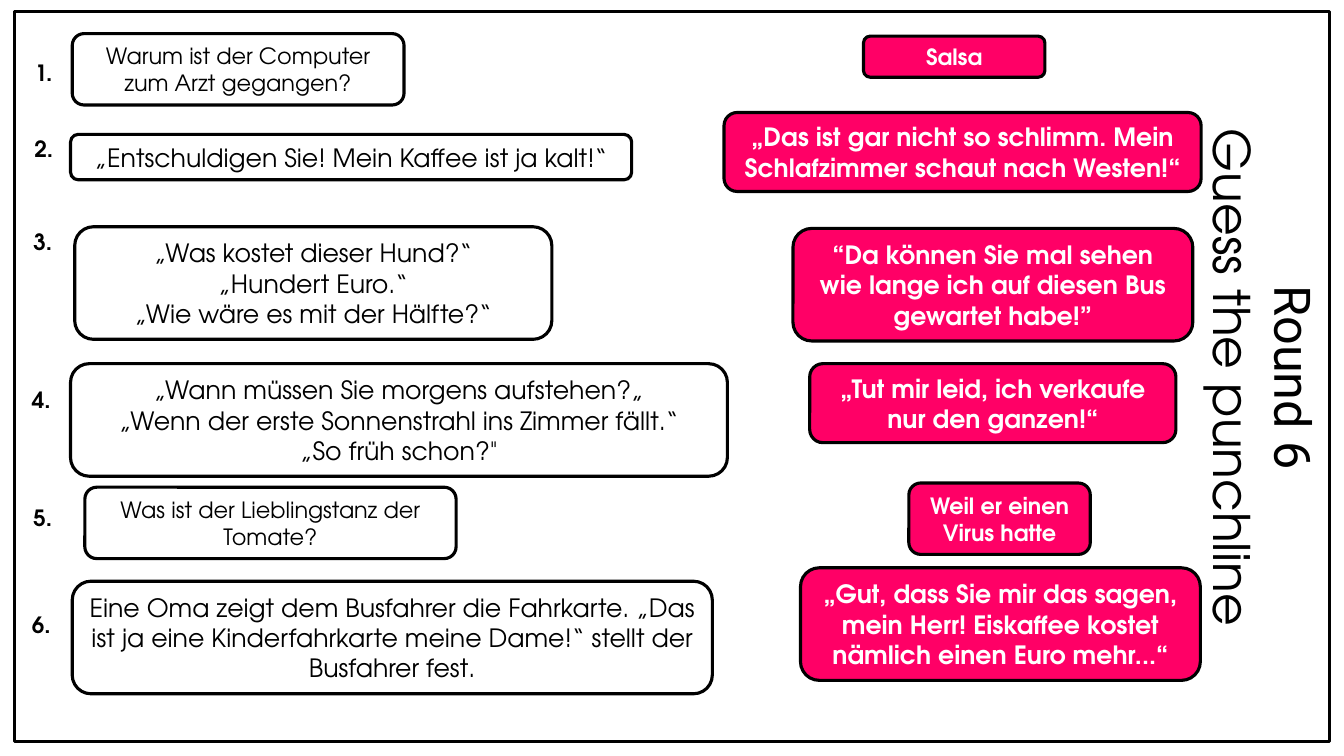
from dataclasses import dataclass

from pptx import Presentation
from pptx.dml.color import RGBColor as Rgb
from pptx.enum.shapes import MSO_SHAPE as Shape
from pptx.enum.text import MSO_ANCHOR as Anchor, MSO_AUTO_SIZE as Fit, PP_ALIGN as Align
from pptx.util import Inches, Pt


@dataclass(frozen=True)
class Theme:
    """Colours, fonts and type sizes of the slide."""
    ink: str = "000000"
    paper: str = "FFFFFF"
    pink: str = "FF0066"
    face: str = "TeX Gyre Adventor"
    head: str = "Roboto"
    title: int = 36
    large: int = 18
    small: int = 16
    line: float = 2.25


THEME = Theme()
COLS, ROWS = 160, 90
WIDE, HIGH = Inches(13.333), Inches(7.5)

JOKES = [
    ((8.6, 4, 39.5, 8.5), THEME.small, ["Warum ist der Computer zum Arzt gegangen?"]),
    ((8.4, 16, 66.8, 5.4), THEME.large, ["„Entschuldigen Sie! Mein Kaffee ist ja kalt!“"]),
    ((8.9, 27, 56.8, 13.4), THEME.large,
     ["„Was kostet dieser Hund?“", "„Hundert Euro.“", "„Wie wäre es mit der Hälfte?“"]),
    ((8.4, 43.3, 78.2, 13.4), THEME.large,
     ["„Wann müssen Sie morgens aufstehen?„",
      "„Wenn der erste Sonnenstrahl ins Zimmer fällt.“", "„So früh schon?\""]),
    ((10.1, 58, 44.2, 8.5), THEME.small, ["Was ist der Lieblingstanz der Tomate?"]),
    ((8.6, 69.2, 76.2, 13.4), THEME.large,
     ["Eine Oma zeigt dem Busfahrer die Fahrkarte. „Das ist ja eine "
      "Kinderfahrkarte meine Dame!“ stellt der Busfahrer fest."]),
]

LINES = [
    ((102.8, 4.3, 21.6, 4.9), THEME.small, "Salsa"),
    ((86.2, 13.4, 56.8, 9.4), THEME.large,
     "„Das ist gar nicht so schlimm. Mein Schlafzimmer schaut nach Westen!“"),
    ((94.4, 27.2, 47.6, 13.4), THEME.large,
     "“Da können Sie mal sehen wie lange ich auf diesen Bus gewartet habe!”"),
    ((96.4, 43.3, 43.6, 9.4), THEME.large, "„Tut mir leid, ich verkaufe nur den ganzen!“"),
    ((108.2, 57.5, 21.6, 8.5), THEME.small, "Weil er einen Virus hatte"),
    ((95.3, 67.6, 47.6, 13.4), THEME.large,
     "„Gut, dass Sie mir das sagen, mein Herr! Eiskaffee kostet nämlich einen Euro mehr...“"),
]

MARKS = [(2.5, 6.2), (2.5, 15.2), (2.4, 26.3), (2.2, 45.1), (2.4, 59.2), (2.2, 71.9)]


def place(cell):
    """Turn columns and rows into slide lengths."""
    left, top, width, height = cell
    return (int(WIDE * left / COLS), int(HIGH * top / ROWS),
            int(WIDE * width / COLS), int(HIGH * height / ROWS))


def write(frame, rows, size, color, bold=False):
    """Write centred paragraphs from pairs of text and font."""
    frame.word_wrap = True
    frame.auto_size = Fit.SHAPE_TO_FIT_TEXT
    for i, (text, face) in enumerate(rows):
        para = frame.paragraphs[0] if i == 0 else frame.add_paragraph()
        para.alignment = Align.CENTER
        run = para.add_run()
        run.text = text
        run.font.name = face
        run.font.size = Pt(size)
        run.font.bold = bold
        run.font.color.rgb = Rgb.from_string(color)


def panel(slide, kind, cell, fill=None, edge=True):
    """Add a plain shape with an optional fill and edge."""
    shape = slide.shapes.add_shape(kind, *place(cell))
    shape.shadow.inherit = False
    if fill:
        shape.fill.solid()
        shape.fill.fore_color.rgb = Rgb.from_string(fill)
    else:
        shape.fill.background()
    if edge:
        shape.line.color.rgb = Rgb.from_string(THEME.ink)
        shape.line.width = Pt(THEME.line)
    else:
        shape.line.fill.background()
    return shape


def card(slide, cell, texts, size, color=THEME.ink, fill=None, edge=True, bold=False):
    """Add a rounded card with its text."""
    shape = panel(slide, Shape.ROUNDED_RECTANGLE, cell, fill, edge)
    shape.text_frame.vertical_anchor = Anchor.MIDDLE
    write(shape.text_frame, [(text, THEME.face) for text in texts], size, color, bold)


def title(slide):
    """Add the title that runs down the right side."""
    box = slide.shapes.add_textbox(*place((118.6, 37.1, 63.7, 15.7)))
    box.rotation = 90
    rows = [("Round 6", THEME.head), ("Guess the punchline", THEME.face)]
    write(box.text_frame, rows, THEME.title, THEME.ink)


def main():
    """Build the slide and save it."""
    deck = Presentation()
    deck.slide_width, deck.slide_height = WIDE, HIGH
    slide = deck.slides.add_slide(deck.slide_layouts[6])
    panel(slide, Shape.RECTANGLE, (1.7, 1.4, 156.6, 86.9))
    title(slide)
    for cell, size, texts in JOKES:
        card(slide, cell, texts, size)
    for cell, size, text in LINES:
        card(slide, cell, [text], size, THEME.paper, THEME.pink, bold=True)
    for num, (left, top) in enumerate(MARKS, 1):
        card(slide, (left, top, 5.4, 4.9), [f"{num}."], THEME.small,
             fill=THEME.paper, edge=False, bold=True)
    deck.save("out.pptx")


if __name__ == "__main__":
    main()
